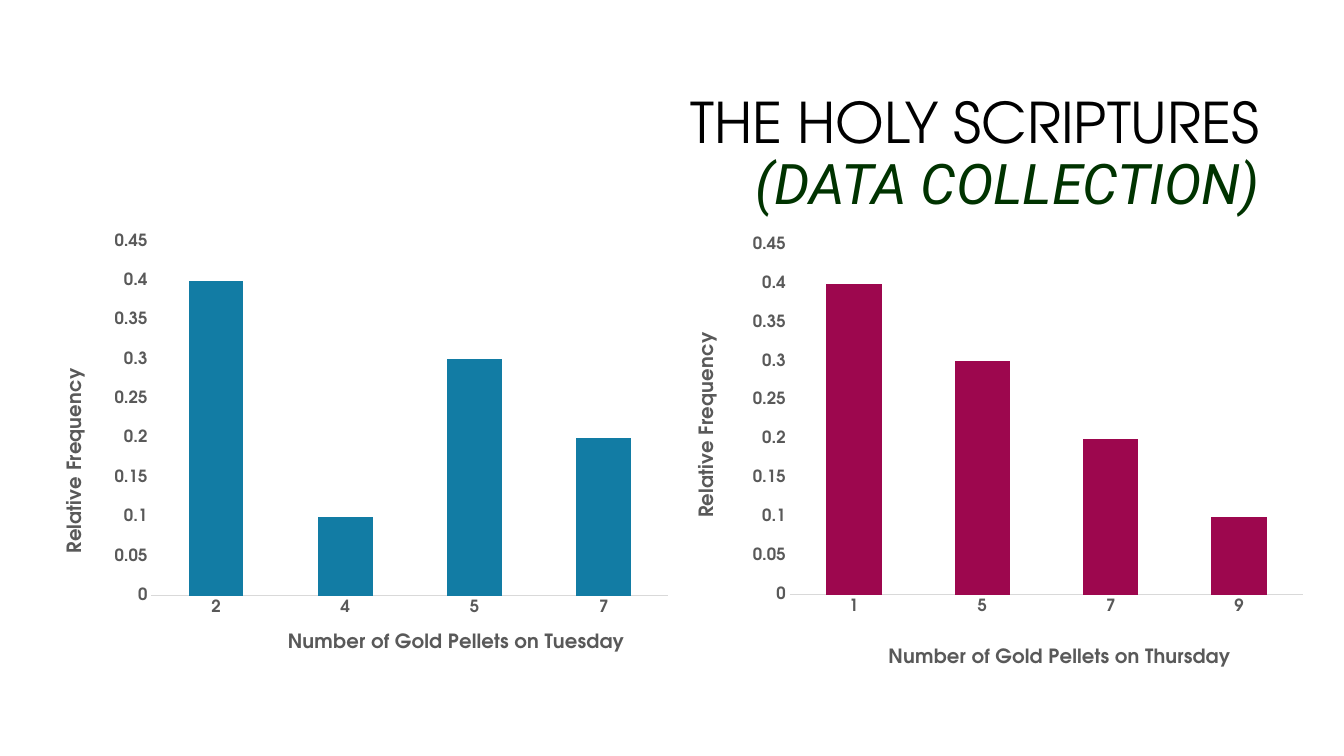
from pptx import Presentation
from pptx.chart.data import CategoryChartData
from pptx.dml.color import RGBColor
from pptx.enum.chart import XL_CHART_TYPE, XL_TICK_MARK
from pptx.enum.text import MSO_ANCHOR, PP_ALIGN
from pptx.oxml import parse_xml
from pptx.oxml.ns import nsdecls, qn
from pptx.util import Inches, Pt

COLUMNS = XL_CHART_TYPE.COLUMN_CLUSTERED
NO_TICKS = XL_TICK_MARK.NONE
MIDDLE = MSO_ANCHOR.MIDDLE
RIGHT = PP_ALIGN.RIGHT

HEADING_FONT = "TeX Gyre Adventor"
SUBTITLE_FONT = "Roboto"
COLORS = {
    "heading": "000000",
    "subtitle": "003300",
    "axis_text": "595959",
    "axis_line": "D9D9D9",
    "tuesday": "127CA4",
    "thursday": "9D074E",
}


def color(name):
    return RGBColor.from_string(COLORS[name])


def style_font(font, size, color_name, name=HEADING_FONT, bold=False, italic=False):
    font.name = name
    font.size = Pt(size)
    font.bold = bold
    font.italic = italic
    font.color.rgb = color(color_name)


def set_layout(parent, index, **values):
    """Give a chart part a manual layout, in fractions of the chart's size."""
    for old_layout in parent.findall(qn("c:layout")):
        parent.remove(old_layout)
    target = '<c:layoutTarget val="inner"/>' if "w" in values else ""
    modes = "".join(f'<c:{key}Mode val="edge"/>' for key in ("x", "y"))
    sizes = "".join(f'<c:{key} val="{value}"/>' for key, value in values.items())
    parent.insert(index, parse_xml(
        f'<c:layout {nsdecls("c")}><c:manualLayout>{target}{modes}{sizes}'
        "</c:manualLayout></c:layout>"))


def style_axis(axis, title, title_position):
    axis.has_major_gridlines = False
    axis.major_tick_mark = axis.minor_tick_mark = NO_TICKS
    style_font(axis.tick_labels.font, 12, "axis_text", bold=True)
    para = axis.axis_title.text_frame.paragraphs[0]
    para.text = title
    style_font(para.runs[0].font, 14, "axis_text", bold=True)
    x, y = title_position
    set_layout(axis.axis_title.element, 1, x=x, y=y)


def add_heading(slide):
    box = slide.shapes.add_textbox(Inches(3.17), Inches(0.84), Inches(9.42), Inches(1.41))
    frame = box.text_frame
    frame.word_wrap = True
    frame.vertical_anchor = MIDDLE
    frame.text = "THE HOLY SCRIPTURES\n(DATA COLLECTION)"
    for para in frame.paragraphs:
        para.alignment = RIGHT
        para.line_spacing = 0.9
    title, subtitle = frame.paragraphs
    style_font(title.runs[0].font, 40, "heading")
    style_font(subtitle.runs[0].font, 40, "subtitle", SUBTITLE_FONT, italic=True)


def add_frequency_chart(slide, day, left, height, frequencies, gap, overlap,
                        plot_area, category_title_at, value_title_at):
    data = CategoryChartData()
    data.categories = list(frequencies)
    data.add_series("Series 1", list(frequencies.values()))
    chart = slide.shapes.add_chart(
        COLUMNS, Inches(left), Inches(2.25), Inches(6.33), Inches(height), data).chart
    chart.has_title = False
    chart.has_legend = False
    style_font(chart.font, 10, "heading")

    plot = chart.plots[0]
    plot.gap_width = gap
    plot.overlap = overlap
    plot.vary_by_categories = False
    fill = plot.series[0].format.fill
    fill.solid()
    fill.fore_color.rgb = color(day.lower())

    category_axis, value_axis = chart.category_axis, chart.value_axis
    style_axis(category_axis, f"Number of Gold Pellets on {day}", category_title_at)
    category_axis.format.line.color.rgb = color("axis_line")
    category_axis.format.line.width = Pt(0.75)

    style_axis(value_axis, "Relative Frequency", value_title_at)
    value_axis.format.line.fill.background()
    value_axis.minimum_scale = 0
    value_axis.maximum_scale = 0.45
    value_axis.major_unit = 0.05

    x, y, width, depth = plot_area
    set_layout(chart.element.find(f'.//{qn("c:plotArea")}'), 0, x=x, y=y, w=width, h=depth)


def main():
    deck = Presentation()
    deck.slide_width = Inches(13.33)
    deck.slide_height = Inches(7.5)
    slide = deck.slides.add_slide(deck.slide_layouts[6])
    add_heading(slide)
    add_frequency_chart(
        slide, "Thursday", left=6.75, height=4.59,
        frequencies={"1": 0.4, "5": 0.3, "7": 0.2, "9": 0.1},
        gap=132, overlap=-27, plot_area=(0.171, 0.039, 0.805, 0.756),
        category_title_at=(0.32, 0.9), value_title_at=(0.02, 0.22))
    add_frequency_chart(
        slide, "Tuesday", left=0.54, height=4.28,
        frequencies={"2": 0.4, "4": 0.1, "5": 0.3, "7": 0.2},
        gap=136, overlap=-25, plot_area=(0.152, 0.034, 0.81, 0.822),
        category_title_at=(0.36, 0.93), value_title_at=(0.01, 0.32))
    deck.save("out.pptx")


if __name__ == "__main__":
    main()
